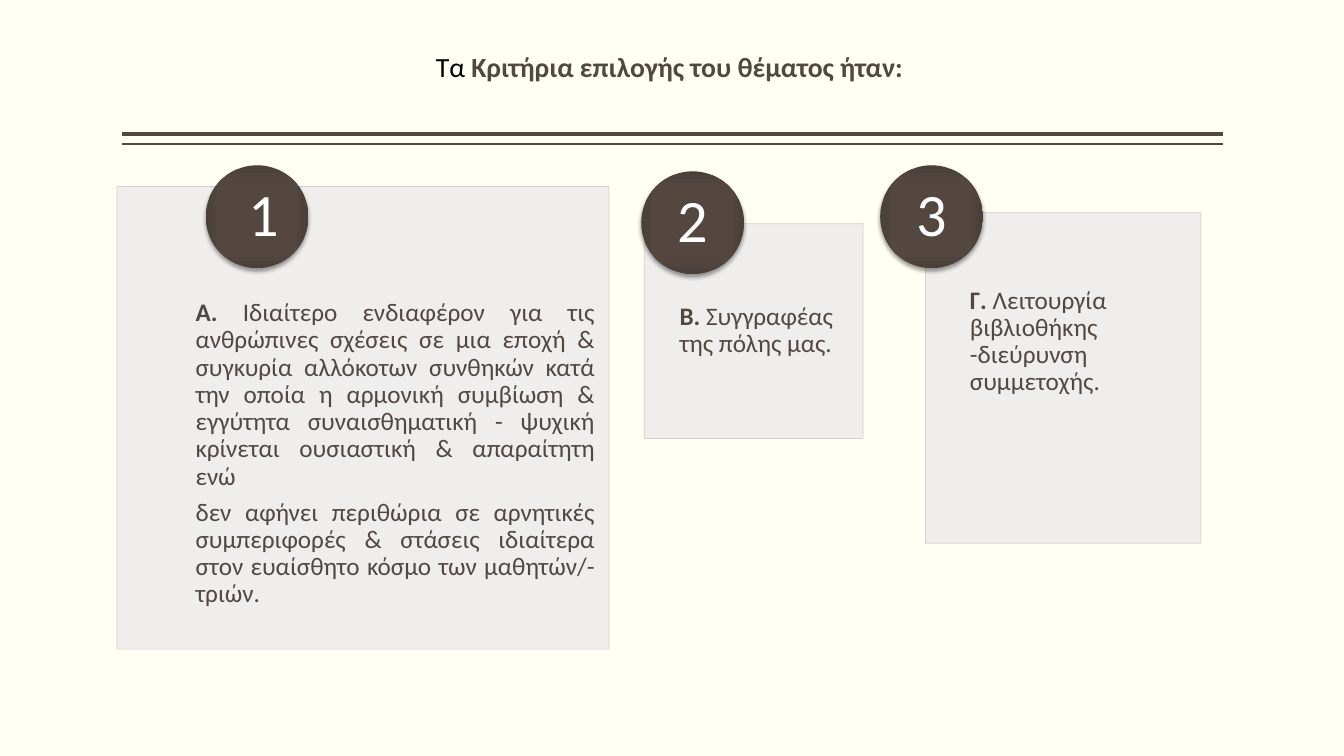
from lxml import etree
from pptx import Presentation
from pptx.dml.color import RGBColor
from pptx.enum.shapes import MSO_CONNECTOR, MSO_SHAPE
from pptx.enum.text import MSO_ANCHOR, MSO_AUTO_SIZE, PP_ALIGN
from pptx.oxml import parse_xml
from pptx.oxml.ns import nsdecls, qn
from pptx.util import Inches, Pt

CENTER, JUSTIFY, LEFT = PP_ALIGN.CENTER, PP_ALIGN.JUSTIFY, PP_ALIGN.LEFT
MIDDLE, BOTTOM = MSO_ANCHOR.MIDDLE, MSO_ANCHOR.BOTTOM
RECTANGLE, OVAL = MSO_SHAPE.RECTANGLE, MSO_SHAPE.OVAL
STRAIGHT, NO_AUTOFIT = MSO_CONNECTOR.STRAIGHT, MSO_AUTO_SIZE.NONE

PAPER, INK, CARD, CARD_EDGE = "FFFFF3", "514843", "EEEDEC", "D0CFCF"
BLACK, WHITE = "000000", "FFFFFF"
BADGE_STOPS = ((0, "544740"), (71, "534740"), (100, "4A3F39"))
BADGE_SIZE = 1.02
CARD_MARGIN = 0.14


def color(hex_string):
    return RGBColor.from_string(hex_string)


def set_alpha(fill_parent, percent):
    """Make the solid fill inside an XML element partly transparent."""
    element = fill_parent.find(qn("a:solidFill"))[0]
    etree.SubElement(element, qn("a:alpha")).set("val", str(percent * 1000))


class CriteriaSlide:
    def __init__(self, presentation):
        self.font_name = "Calibri"
        self.slide = presentation.slides.add_slide(presentation.slide_layouts[5])
        background = self.slide.background.fill
        background.solid()
        background.fore_color.rgb = color(PAPER)

    def frame(self, shape, anchor, margins):
        """Set anchor and left, top, right, bottom margins; return the text frame."""
        frame = shape.text_frame
        frame.word_wrap = True
        frame.auto_size = NO_AUTOFIT
        frame.vertical_anchor = anchor
        (frame.margin_left, frame.margin_top,
         frame.margin_right, frame.margin_bottom) = map(Inches, margins)
        return frame

    def fill_paragraph(self, paragraph, runs, size, align, spacing, after):
        """Fill a paragraph with (text, bold, colour) runs."""
        paragraph.alignment = align
        paragraph.line_spacing = spacing
        paragraph.space_after = Pt(after)
        paragraph.font.name = self.font_name
        paragraph.font.size = Pt(size)
        for text, bold, ink in runs:
            run = paragraph.add_run()
            run.text = text
            run.font.bold = bold
            run.font.color.rgb = color(ink)

    def title(self, runs):
        title = self.slide.shapes.title
        title.left, title.top = Inches(1.21), Inches(0.08)
        title.width, title.height = Inches(10.92), Inches(1.2)
        frame = self.frame(title, BOTTOM, (0, 0.05, 0, 0.46))
        self.fill_paragraph(frame.paragraphs[0], runs, 19.8, CENTER, 1.07, 8)

    def rule(self, y, width):
        line = self.slide.shapes.add_connector(
            STRAIGHT, Inches(1.21), Inches(y), Inches(12.13), Inches(y))
        line.line.color.rgb = color(INK)
        line.line.width = Pt(width)
        etree.SubElement(line._element.spPr, qn("a:effectLst"))

    def card(self, box, indent, paragraphs, align=LEFT, extra_top=0, extra_bottom=0):
        card = self.slide.shapes.add_shape(RECTANGLE, *map(Inches, box))
        card.shadow.inherit = False
        card.fill.solid()
        card.fill.fore_color.rgb = color(CARD)
        card.line.color.rgb = color(CARD_EDGE)
        card.line.width = Pt(0.5)
        properties = card._element.spPr
        set_alpha(properties, 90)
        set_alpha(properties.find(qn("a:ln")), 90)
        margins = (indent, CARD_MARGIN + extra_top, CARD_MARGIN, CARD_MARGIN + extra_bottom)
        frame = self.frame(card, MIDDLE, margins)
        for index, runs in enumerate(paragraphs):
            paragraph = frame.add_paragraph() if index else frame.paragraphs[0]
            self.fill_paragraph(paragraph, runs, 18, align, 0.9, 6.3)

    def badge(self, left, top, number):
        """Add a numbered disc with a soft gradient and shadow."""
        badge = self.slide.shapes.add_shape(
            OVAL, Inches(left), Inches(top), Inches(BADGE_SIZE), Inches(BADGE_SIZE))
        badge.line.fill.background()
        stops = "".join(
            f'<a:gs pos="{position * 1000}"><a:srgbClr val="{shade}"/></a:gs>'
            for position, shade in BADGE_STOPS)
        properties = badge._element.spPr
        properties.find(qn("a:prstGeom")).addnext(parse_xml(
            f'<a:gradFill {nsdecls("a")} rotWithShape="1"><a:gsLst>{stops}</a:gsLst>'
            '<a:path path="rect"><a:fillToRect l="50000" t="50000" r="50000" b="50000"/>'
            '</a:path></a:gradFill>'))
        properties.append(parse_xml(
            f'<a:effectLst {nsdecls("a")}><a:outerShdw blurRad="{Pt(3.1)}" dist="{Pt(2)}" '
            f'dir="5400000" rotWithShape="0"><a:srgbClr val="{BLACK}">'
            '<a:alpha val="38000"/></a:srgbClr></a:outerShdw></a:effectLst>'))
        frame = self.frame(badge, MIDDLE, (0, 0, 0, 0))
        self.fill_paragraph(frame.paragraphs[0], [(number, False, WHITE)], 43, CENTER, 0.9, 0)


def main():
    presentation = Presentation()
    presentation.slide_width, presentation.slide_height = Inches(13.33), Inches(7.5)
    criteria = CriteriaSlide(presentation)
    criteria.rule(1.33, 3)
    criteria.rule(1.43, 1)
    criteria.title([("Τα ", False, BLACK),
                    ("Κριτήρια επιλογής του θέματος ήταν: ", True, INK)])

    criteria.card((1.16, 1.85, 4.88, 4.59), 0.78, [
        [("Α. ", True, INK),
         ("Ιδιαίτερo ενδιαφέρον για τις ανθρώπινες σχέσεις σε μια εποχή & "
          "συγκυρία αλλόκοτων συνθηκών κατά την οποία η αρμονική συμβίωση & "
          "εγγύτητα συναισθηματική - ψυχική κρίνεται ουσιαστική & απαραίτητη ενώ ",
          False, INK)],
        [("δεν αφήνει περιθώρια σε αρνητικές συμπεριφορές & στάσεις ιδιαίτερα "
          "στον ευαίσθητο κόσμο των μαθητών/-τριών. ", False, INK)],
    ], align=JUSTIFY, extra_top=0.72)
    criteria.badge(2.04, 1.64, " 1")

    criteria.card((6.39, 2.22, 2.17, 2.13), 0.35, [
        [("Β.", True, INK), (" Συγγραφέας της πόλης μας.", False, INK)]])
    criteria.badge(6.36, 1.7, "2")

    criteria.card((9.18, 2.11, 2.73, 3.28), 0.44, [
        [("Γ.", True, INK),
         (" Λειτουργία βιβλιοθήκης -διεύρυνση συμμετοχής.", False, INK)],
    ], extra_bottom=0.72)
    criteria.badge(8.73, 1.64, "3")

    presentation.save("out.pptx")


if __name__ == "__main__":
    main()
